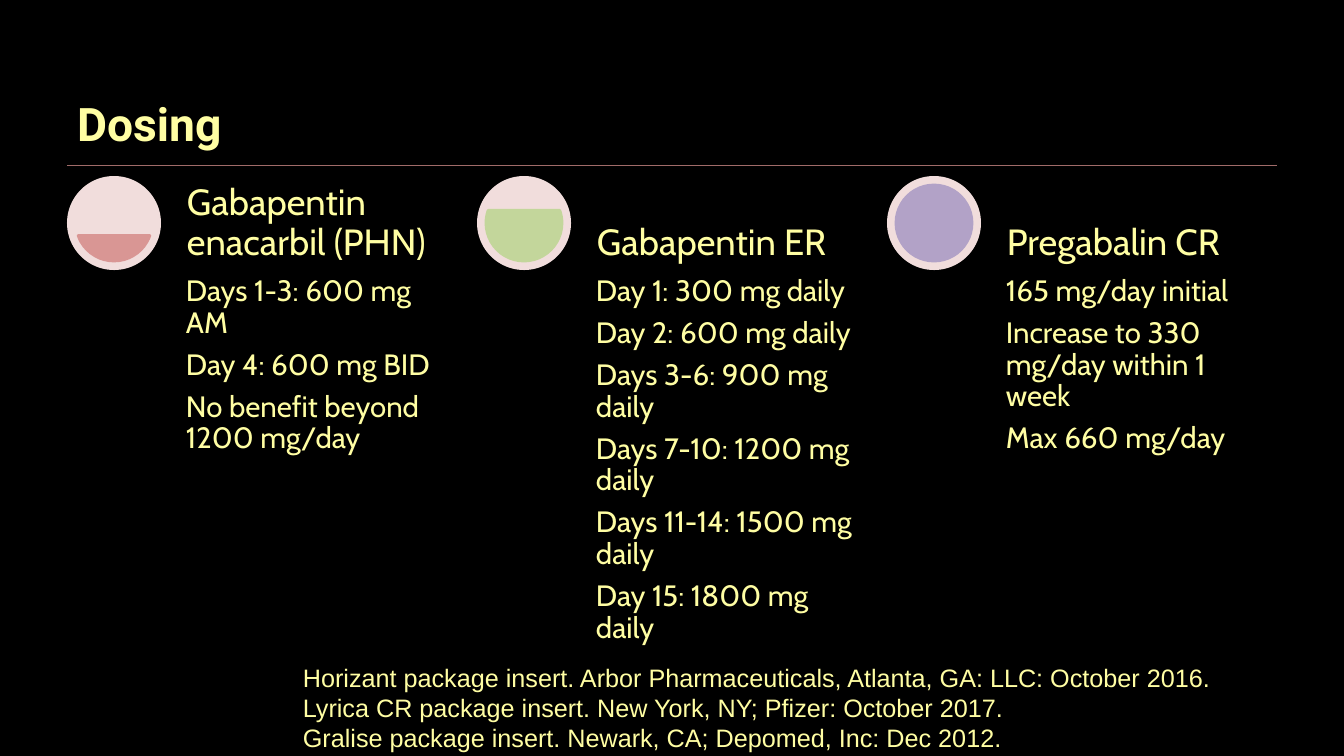
from lxml import etree
from pptx import Presentation
from pptx.dml.color import RGBColor
from pptx.enum.shapes import MSO_CONNECTOR, MSO_SHAPE
from pptx.enum.text import MSO_ANCHOR, MSO_AUTO_SIZE, PP_ALIGN
from pptx.oxml.ns import qn
from pptx.util import Emu, Pt

STRAIGHT = MSO_CONNECTOR.STRAIGHT
ELLIPSE, CHORD = MSO_SHAPE.OVAL, MSO_SHAPE.CHORD
TOP, BOTTOM = MSO_ANCHOR.TOP, MSO_ANCHOR.BOTTOM
NO_AUTOFIT = MSO_AUTO_SIZE.NONE
LEFT = PP_ALIGN.LEFT

PAGE_WIDTH, PAGE_HEIGHT = 1344, 756
EMU_PER_PX = 12192000 / PAGE_WIDTH

COLORS = {
    "background": "000000",
    "text": "FFFEA3",
    "rule": "A06B69",
    "disc": "F1DDDC",
    "red": "D99694",
    "green": "C3D69B",
    "purple": "B2A2C7",
}

# Text formats
TITLE_FONT = {"name": "Roboto", "size": Pt(33), "bold": True}
HEADING_FONT = {"name": "Cabin", "size": Pt(26)}
DOSE_FONT = {"name": "Cabin", "size": Pt(21)}
SOURCE_FONT = {"name": "Arial", "size": Pt(18)}
HEADING_SPACING = {"line_spacing": 0.9}
DOSE_SPACING = {"line_spacing": 0.9, "space_after": Pt(7.35)}

# Column geometry
COLUMN_LEFT, COLUMN_TOP, COLUMN_PITCH = 67, 176, 410
DISC_SIZE, LEVEL_INSET = 94, 9
TEXT_OFFSET, TEXT_WIDTH, DOSE_HEIGHT = 113, 277, 394

# Drug, doses, level colour, chord start and end
COLUMNS = [
    ("Gabapentin enacarbil (PHN)",
     ["Days 1-3: 600 mg AM", "Day 4: 600 mg BID",
      "No benefit beyond 1200 mg/day"],
     "red", (11.683, 96.317)),
    ("Gabapentin ER",
     ["Day 1: 300 mg daily", "Day 2: 600 mg daily",
      "Days 3-6: 900 mg daily", "Days 7-10: 1200 mg daily",
      "Days 11-14: 1500 mg daily", "Day 15: 1800 mg daily"],
     "green", (204.317, 119.683)),
    ("Pregabalin CR",
     ["165 mg/day initial", "Increase to 330 mg/day within 1 week",
      "Max 660 mg/day"],
     "purple", (162, 162)),
]

SOURCES = [
    "Horizant package insert. Arbor Pharmaceuticals, Atlanta, GA: LLC: October 2016.",
    "Lyrica CR package insert. New York, NY; Pfizer: October 2017.",
    "Gralise package insert. Newark, CA; Depomed, Inc: Dec 2012.",
]


def px(length):
    return Emu(round(length * EMU_PER_PX))


def color(name):
    return RGBColor.from_string(COLORS[name])


def set_attributes(target, values):
    for name, value in values.items():
        setattr(target, name, value)


def fill_text(box, lines, font, spacing, anchor=TOP, inset=None):
    frame = box.text_frame
    set_attributes(frame, {"word_wrap": True, "auto_size": NO_AUTOFIT,
                           "vertical_anchor": anchor})
    if inset is not None:
        sides = ("margin_left", "margin_top", "margin_right", "margin_bottom")
        set_attributes(frame, dict.fromkeys(sides, px(inset)))
    for index, line in enumerate(lines):
        para = frame.add_paragraph() if index else frame.paragraphs[0]
        set_attributes(para, {"alignment": LEFT, **spacing})
        span = para.add_run()
        span.text = line
        set_attributes(span.font, font)
        span.font.color.rgb = color("text")


def add_text(page, bounds, lines, font, spacing, anchor=TOP, inset=None):
    box = page.shapes.add_textbox(*map(px, bounds))
    fill_text(box, lines, font, spacing, anchor, inset)


def add_title(page, text):
    title = page.shapes.title
    set_attributes(title, {"left": px(67), "top": px(30),
                           "width": px(1210), "height": px(126)})
    fill_text(title, [text], TITLE_FONT, {}, BOTTOM)


def add_rule(page):
    rule = page.shapes.add_connector(STRAIGHT, px(67), px(166), px(1277), px(166))
    rule.line.color.rgb = color("rule")
    rule.line.width = Pt(0.75)
    etree.SubElement(rule.element.spPr, qn("a:effectLst"))


def add_round(page, kind, left, top, size, fill):
    shape = page.shapes.add_shape(kind, px(left), px(top), px(size), px(size))
    shape.shadow.inherit = False
    shape.fill.solid()
    shape.fill.fore_color.rgb = color(fill)
    shape.line.fill.background()
    return shape


def add_gauge(page, left, fill, angles):
    add_round(page, ELLIPSE, left, COLUMN_TOP, DISC_SIZE, "disc")
    level = add_round(page, CHORD, left + LEVEL_INSET, COLUMN_TOP + LEVEL_INSET,
                      DISC_SIZE - 2 * LEVEL_INSET, fill)
    level.adjustments[0], level.adjustments[1] = angles
    level.line.color.rgb = color(fill)
    level.line.width = Pt(2)


def add_column(page, left, drug, doses, fill, angles):
    add_gauge(page, left, fill, angles)
    text_left = left + TEXT_OFFSET
    add_text(page, (text_left, COLUMN_TOP + DISC_SIZE, TEXT_WIDTH, DOSE_HEIGHT),
             doses, DOSE_FONT, DOSE_SPACING, inset=6)
    add_text(page, (text_left, COLUMN_TOP, TEXT_WIDTH, DISC_SIZE),
             [drug], HEADING_FONT, HEADING_SPACING, BOTTOM, inset=7)


def main():
    deck = Presentation()
    deck.slide_width, deck.slide_height = px(PAGE_WIDTH), px(PAGE_HEIGHT)
    page = deck.slides.add_slide(deck.slide_layouts.get_by_name("Title Only"))
    page.background.fill.solid()
    page.background.fill.fore_color.rgb = color("background")

    # Title and rule
    add_rule(page)
    add_title(page, "Dosing")

    # Dosing columns
    for index, column in enumerate(COLUMNS):
        add_column(page, COLUMN_LEFT + index * COLUMN_PITCH, *column)

    # Sources
    add_text(page, (293, 657, 983, 138), SOURCES, SOURCE_FONT, {})

    deck.save("out.pptx")


if __name__ == "__main__":
    main()
